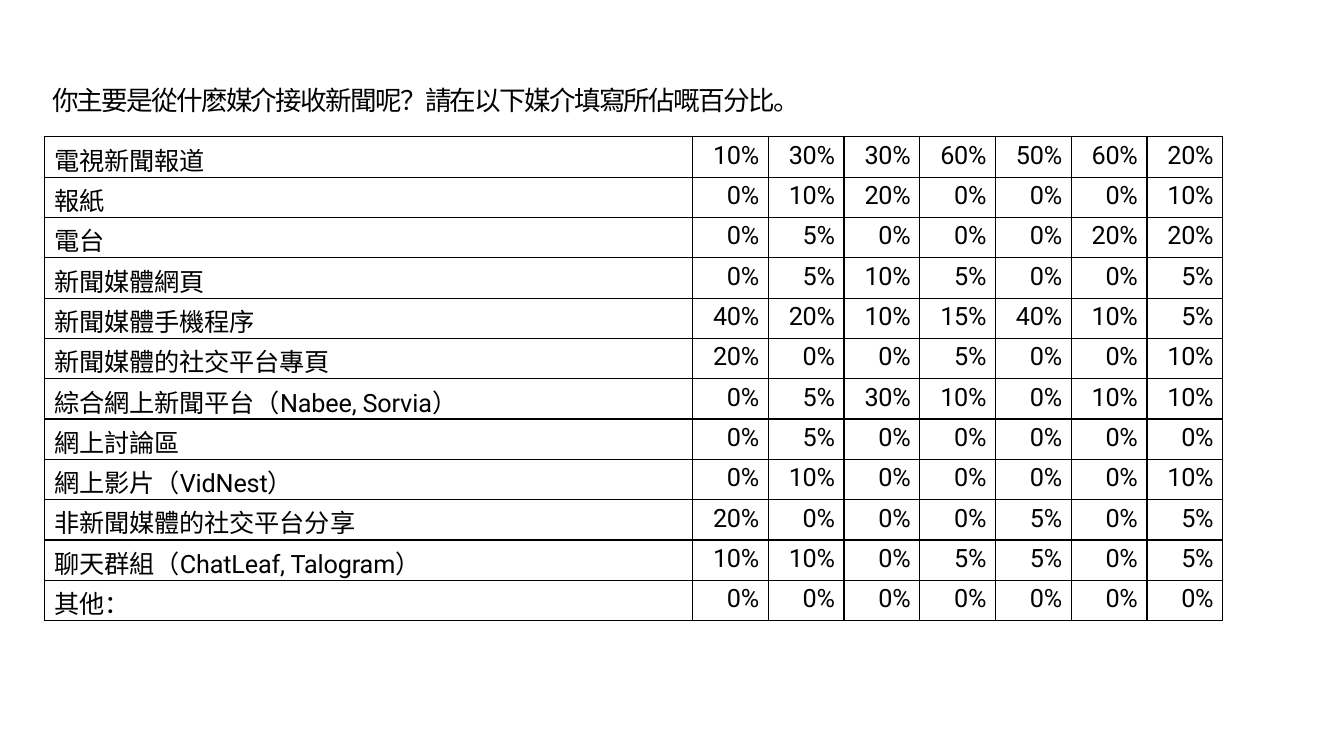
from itertools import groupby
from pptx import Presentation
from pptx.dml.color import RGBColor
from pptx.enum.text import MSO_ANCHOR, MSO_AUTO_SIZE, PP_ALIGN
from pptx.oxml import parse_xml
from pptx.oxml.ns import nsdecls, qn
from pptx.util import Inches, Pt

BLACK = RGBColor(0, 0, 0)
HAN, LATIN = "Noto Sans CJK TC", "Roboto"
WIDE, HIGH = Inches(13.33), Inches(7.5)

TITLE = "你主要是從什麽媒介接收新聞呢？請在以下媒介填寫所佔嘅百分比。"
MEDIA = [
    ("電視新聞報道", 10, 30, 30, 60, 50, 60, 20),
    ("報紙", 0, 10, 20, 0, 0, 0, 10),
    ("電台", 0, 5, 0, 0, 0, 20, 20),
    ("新聞媒體網頁", 0, 5, 10, 5, 0, 0, 5),
    ("新聞媒體手機程序", 40, 20, 10, 15, 40, 10, 5),
    ("新聞媒體的社交平台專頁", 20, 0, 0, 5, 0, 0, 10),
    ("綜合網上新聞平台（Nabee, Sorvia）", 0, 5, 30, 10, 0, 10, 10),
    ("網上討論區", 0, 5, 0, 0, 0, 0, 0),
    ("網上影片（VidNest）", 0, 10, 0, 0, 0, 0, 10),
    ("非新聞媒體的社交平台分享", 20, 0, 0, 0, 5, 0, 5),
    ("聊天群組（ChatLeaf, Talogram）", 10, 10, 0, 5, 5, 0, 5),
    ("其他：", 0, 0, 0, 0, 0, 0, 0),
]


def apply(item, style):
    for name, value in style.items():
        setattr(item, name, value)


def share(left, top, width, height):
    """Turn shares of the slide's size into lengths."""
    return [round(part * whole) for part, whole in
            zip((left, top, width, height), (WIDE, HIGH, WIDE, HIGH))]


def write(para, text, size, track):
    """Add one run per script, each in its own font."""
    for plain, marks in groupby(text, str.isascii):
        run = para.add_run()
        run.text = "".join(marks)
        face = LATIN if plain else HAN
        apply(run.font, {"size": Pt(size), "name": face, "bold": False})
        run.font.color.rgb = BLACK
        props = run.font._element
        props.set("spc", str(track))
        props.find(qn("a:latin")).addnext(
            parse_xml(f'<a:ea {nsdecls("a")} typeface="{face}"/>'))


def frame(cell):
    """Draw a thin black line on all four sides."""
    props = cell._tc.get_or_add_tcPr()
    for side in ("lnL", "lnR", "lnT", "lnB"):
        props.append(parse_xml(
            f'<a:{side} {nsdecls("a")} w="{Pt(1)}"><a:solidFill>'
            f'<a:srgbClr val="{BLACK}"/></a:solidFill></a:{side}>'))
    cell.fill.background()


def fill(cell, value):
    """Write a label on the left or a percentage on the right."""
    frame(cell)
    apply(cell, {"margin_left": 0, "margin_right": 0, "margin_bottom": 0,
                 "margin_top": Inches(0.04),
                 "vertical_anchor": MSO_ANCHOR.TOP})
    para = cell.text_frame.paragraphs[0]
    label = isinstance(value, str)
    para.alignment = PP_ALIGN.LEFT if label else PP_ALIGN.RIGHT
    edge, gap = ("marL", 0.1) if label else ("marR", 0.09)
    para._p.get_or_add_pPr().set(edge, str(Inches(gap)))
    write(para, value if label else f"{value}%", 18, -10 if label else -20)


def add_title(slide, box):
    title = slide.shapes.title
    apply(title, dict(zip(("left", "top", "width", "height"), box)))
    text = title.text_frame
    apply(text, {"margin_left": 0, "margin_right": 0, "margin_bottom": 0,
                 "margin_top": Inches(0.01), "word_wrap": True,
                 "vertical_anchor": MSO_ANCHOR.TOP,
                 "auto_size": MSO_AUTO_SIZE.SHAPE_TO_FIT_TEXT})
    para = text.paragraphs[0]
    para.alignment = PP_ALIGN.LEFT
    para._p.get_or_add_pPr().set("marL", str(Inches(0.01)))
    write(para, TITLE, 19, -120)


def add_grid(slide, box):
    """Lay out the media table: a wide label column, then equal ones."""
    count = len(MEDIA[0])
    table = slide.shapes.add_table(len(MEDIA), count, *box).table
    apply(table, {"first_row": False, "horz_banding": False})
    first = round(box[2] * 0.55)
    for spot, column in enumerate(table.columns):
        column.width = (box[2] - first) // (count - 1) if spot else first
    for row, values in zip(table.rows, MEDIA):
        row.height = box[3] // len(MEDIA)
        for cell, value in zip(row.cells, values):
            fill(cell, value)


def main():
    deck = Presentation()
    apply(deck, {"slide_width": WIDE, "slide_height": HIGH})
    slide = deck.slides.add_slide(deck.slide_layouts[5])
    add_title(slide, share(0.038, 0.11, 0.565, 0.045))
    add_grid(slide, share(0.033, 0.181, 0.877, 0.64))
    deck.save("out.pptx")


if __name__ == "__main__":
    main()
